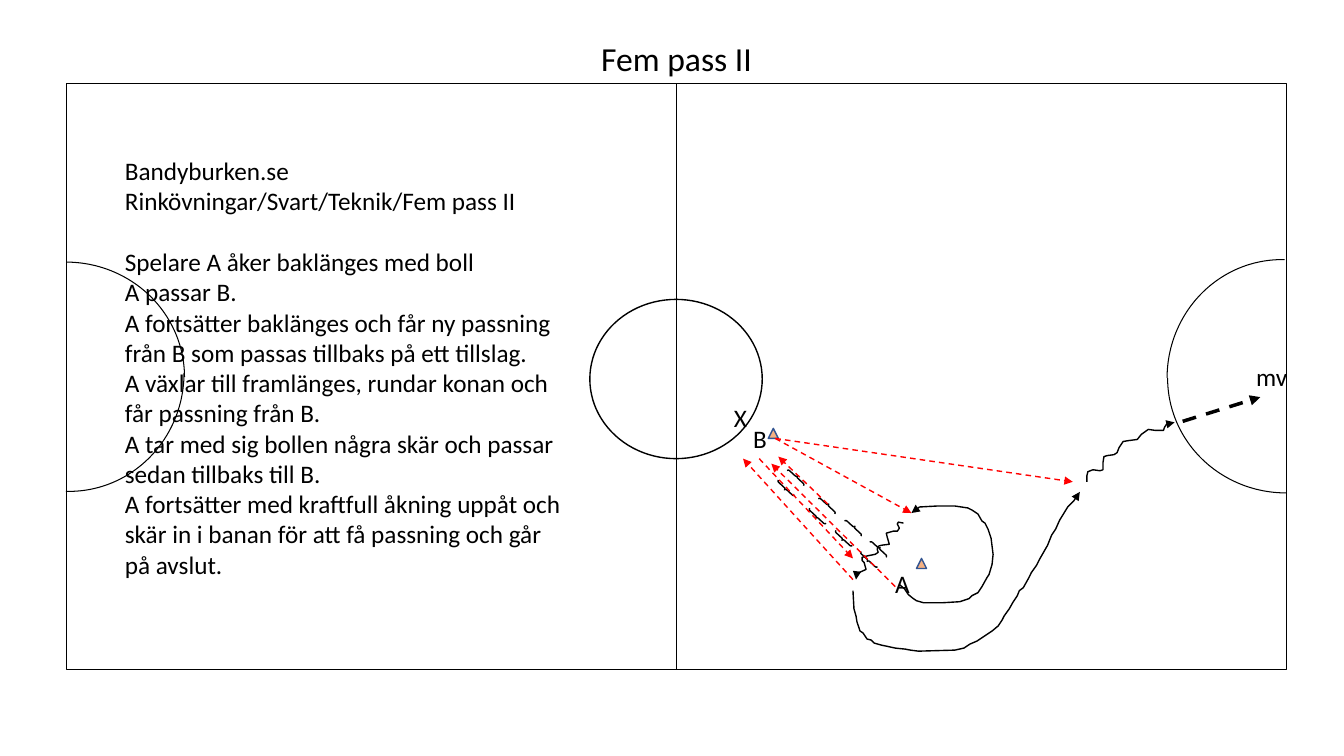
from dataclasses import dataclass

from lxml.etree import SubElement
from pptx import Presentation
from pptx.dml.color import RGBColor
from pptx.enum.dml import MSO_LINE
from pptx.enum.shapes import MSO_CONNECTOR, MSO_SHAPE
from pptx.enum.text import MSO_AUTO_SIZE, PP_ALIGN
from pptx.oxml.ns import qn
from pptx.util import Inches, Pt


@dataclass(frozen=True)
class Theme:
    font: str = "Calibri"
    title_size: int = 24
    body_size: int = 18
    ink: RGBColor = RGBColor(0, 0, 0)
    pass_red: RGBColor = RGBColor(0xFF, 0, 0)
    cone_fill: RGBColor = RGBColor(0xF4, 0xB1, 0x83)
    cone_line: RGBColor = RGBColor(0x32, 0x54, 0x91)
    thin: float = 0.75
    normal: float = 1
    thick: float = 2.5


@dataclass(frozen=True)
class Box:
    left: float
    top: float
    width: float
    height: float

    def inside(self, left, top, width, height):
        """Return a box whose place is measured from this box's corner."""
        return Box(self.left + left, self.top + top, width, height)

    def point(self, x, y):
        return Inches(self.left + x), Inches(self.top + y)

    def lengths(self):
        return [Inches(n) for n in (self.left, self.top, self.width, self.height)]


THEME = Theme()

INSTRUCTIONS = [
    "Bandyburken.se",
    "Rinkövningar/Svart/Teknik/Fem pass II",
    "Spelare A åker baklänges med boll",
    "A passar B.",
    "A fortsätter baklänges och får ny passning från B som passas tillbaks på ett tillslag.",
    "A växlar till framlänges, rundar konan och får passning från B.",
    "A tar med sig bollen några skär och passar sedan tillbaks till B.",
    "A fortsätter med kraftfull åkning uppåt och skär in i banan för att få passning och går på avslut.",
]
DRILL_START = 2

PLAYERS = [("B", 7.37, 4.15, 0.32), ("X", 7.18, 3.94, 0.32),
           ("A", 8.78, 5.59, 0.32), ("mv", 12.36, 3.54, 0.63)]
CONES = [(7.62, 4.25), (9.09, 5.54)]
BACKWARD_MARKS = [(7.75, 4.68), (8.06, 4.96), (8.32, 5.18), (8.57, 5.39)]
PASSES = [
    ((7.53, 4.55), (8.46, 5.54)),
    ((8.21, 5), (7.72, 4.53)),
    ((8.88, 5.82), (7.65, 4.6)),
    ((7.69, 4.35), (9.04, 5.09)),
    ((8.46, 5.75), (7.37, 4.55)),
    ((7.69, 4.35), (10.64, 4.78)),
]
SHOT = ((11.73, 4.18), (12.5, 3.94))

LOOP_ROUND_CONE = [
    (8.92, 5.8), (8.97, 5.84), (9.01, 5.9), (9.06, 5.94), (9.09, 5.96), (9.16, 5.98),
    (9.35, 5.98), (9.52, 5.97), (9.61, 5.94), (9.64, 5.91), (9.7, 5.88), (9.74, 5.82),
    (9.79, 5.73), (9.81, 5.7), (9.84, 5.6), (9.85, 5.5), (9.83, 5.34), (9.8, 5.25),
    (9.77, 5.19), (9.74, 5.17), (9.7, 5.1), (9.64, 5.06), (9.6, 5.04), (9.47, 5.02),
    (9.3, 5.02), (9.12, 5.03), (9.07, 5.07), (9.04, 5.09)]
DRIBBLE_TO_SHOT = [
    (10.78, 4.78), (10.78, 4.72), (10.79, 4.68), (10.84, 4.66), (10.91, 4.67),
    (10.94, 4.66), (10.94, 4.59), (10.95, 4.53), (10.98, 4.52), (11.05, 4.51),
    (11.08, 4.49), (11.1, 4.44), (11.14, 4.38), (11.2, 4.37), (11.28, 4.36),
    (11.32, 4.31), (11.39, 4.26), (11.46, 4.27), (11.54, 4.27), (11.55, 4.24),
    (11.57, 4.21), (11.6, 4.19), (11.65, 4.19)]
DRIBBLE_TO_PASS = [
    (8.96, 5.19), (8.91, 5.18), (8.9, 5.2), (8.92, 5.24), (8.9, 5.27), (8.86, 5.27),
    (8.79, 5.29), (8.8, 5.33), (8.82, 5.4), (8.74, 5.41), (8.71, 5.42), (8.7, 5.45),
    (8.71, 5.48), (8.68, 5.5), (8.58, 5.52), (8.55, 5.53), (8.55, 5.56), (8.57, 5.58),
    (8.59, 5.65), (8.5, 5.69), (8.47, 5.7), (8.49, 5.75)]
RUN_UP_FIELD = [
    (8.46, 5.86), (8.47, 6.04), (8.49, 6.11), (8.5, 6.17), (8.52, 6.23), (8.53, 6.26),
    (8.56, 6.28), (8.6, 6.34), (8.64, 6.35), (8.67, 6.38), (8.74, 6.4), (8.79, 6.41),
    (8.88, 6.43), (8.98, 6.44), (9.03, 6.45), (9.11, 6.46), (9.47, 6.45), (9.56, 6.43),
    (9.62, 6.39), (9.69, 6.36), (9.84, 6.26), (9.9, 6.21), (9.94, 6.15), (9.96, 6.11),
    (10.01, 6.04), (10.05, 5.97), (10.09, 5.91), (10.11, 5.86), (10.15, 5.83),
    (10.2, 5.74), (10.23, 5.68), (10.28, 5.61), (10.31, 5.55), (10.35, 5.48),
    (10.39, 5.41), (10.43, 5.31), (10.47, 5.25), (10.51, 5.16), (10.59, 5.03),
    (10.65, 4.97), (10.69, 4.91), (10.71, 4.88)]
SKATING = [LOOP_ROUND_CONE, DRIBBLE_TO_SHOT, DRIBBLE_TO_PASS, RUN_UP_FIELD]


def style_line(line, color, width):
    line.color.rgb = color
    line.width = Pt(width)


def add_arrowhead(line):
    SubElement(line._get_or_add_ln(), qn("a:tailEnd"), type="triangle")


def add_outline(page, kind, box, width=THEME.normal, rotation=0):
    shape = page.shapes.add_shape(kind, *box.lengths())
    shape.shadow.inherit = False
    shape.fill.background()
    style_line(shape.line, THEME.ink, width)
    shape.rotation = rotation
    return shape


def add_straight(page, start, end, color, width):
    connector = page.shapes.add_connector(MSO_CONNECTOR.STRAIGHT, *start, *end)
    style_line(connector.line, color, width)
    SubElement(connector._element.spPr, qn("a:effectLst"))
    return connector


def add_dashed_arrow(page, board, ends, color, width):
    start, end = ends
    arrow = add_straight(page, board.point(*start), board.point(*end), color, width)
    arrow.line.dash_style = MSO_LINE.DASH
    add_arrowhead(arrow.line)


def add_skating_path(page, board, points):
    start, *rest = [board.point(*point) for point in points]
    builder = page.shapes.build_freeform(*start)
    builder.add_line_segments(rest, close=False)
    path = builder.convert_to_shape()
    path.shadow.inherit = False
    path.fill.background()
    style_line(path.line, THEME.ink, THEME.normal)
    add_arrowhead(path.line)


def add_text(page, box, lines, size=THEME.body_size, align=PP_ALIGN.LEFT):
    frame = page.shapes.add_textbox(*box.lengths()).text_frame
    frame.word_wrap = True
    frame.auto_size = MSO_AUTO_SIZE.SHAPE_TO_FIT_TEXT
    frame.text = "\n".join(lines)
    for para in frame.paragraphs:
        para.alignment = align
        para.font.name = THEME.font
        para.font.size = Pt(size)
        para.font.color.rgb = THEME.ink
    return frame


def draw_rink(page, rink):
    add_outline(page, MSO_SHAPE.RECTANGLE, rink)
    middle = rink.width / 2
    add_straight(page, rink.point(middle, rink.height), rink.point(middle, 0),
                 THEME.ink, THEME.thin)
    add_outline(page, MSO_SHAPE.OVAL, rink.inside(middle - 0.86, 2.14, 1.71, 1.58))
    # Each penalty area is two quarter arcs: offset in the rink, rotation, end angle.
    quarters = [(-1.18, 1.77, 0, 0), (-1.15, 1.73, 90, 0.9),
                (10.92, 1.78, 180, 0), (10.88, 1.78, 270, 0.78)]
    for left, top, rotation, end_angle in quarters:
        arc = add_outline(page, MSO_SHAPE.ARC, rink.inside(left, top, 2.35, 2.28),
                          THEME.thin, rotation)
        arc.adjustments[1] = end_angle


def draw_drill(page, board):
    for left, top in CONES:
        cone = add_outline(page, MSO_SHAPE.ISOSCELES_TRIANGLE,
                           board.inside(left, top, 0.1, 0.1))
        cone.fill.solid()
        cone.fill.fore_color.rgb = THEME.cone_fill
        cone.line.color.rgb = THEME.cone_line
    for left, top in BACKWARD_MARKS:
        add_outline(page, MSO_SHAPE.DOUBLE_BRACE,
                    board.inside(left, top, 0.19, 0.22), rotation=132.7)
    for points in SKATING:
        add_skating_path(page, board, points)
    for ends in PASSES:
        add_dashed_arrow(page, board, ends, THEME.pass_red, THEME.normal)
    add_dashed_arrow(page, board, SHOT, THEME.ink, THEME.thick)
    for name, left, top, width in PLAYERS:
        add_text(page, board.inside(left, top, width, 0.4), [name])


def write_instructions(page, box):
    frame = add_text(page, box, INSTRUCTIONS)
    frame.paragraphs[DRILL_START].space_before = Pt(22)


def main():
    deck = Presentation()
    deck.slide_width, deck.slide_height = Inches(13.33), Inches(7.5)
    page = deck.slides.add_slide(deck.slide_layouts[6])
    draw_rink(page, Box(0.66, 0.83, 12.1, 5.81))
    add_text(page, Box(3.85, 0.33, 5.72, 0.5), ["Fem pass II"],
             THEME.title_size, PP_ALIGN.CENTER)
    draw_drill(page, Box(0, 0, 13.33, 7.5))
    write_instructions(page, Box(1.14, 1.49, 4.63, 4.34))
    deck.save("out.pptx")


if __name__ == "__main__":
    main()
